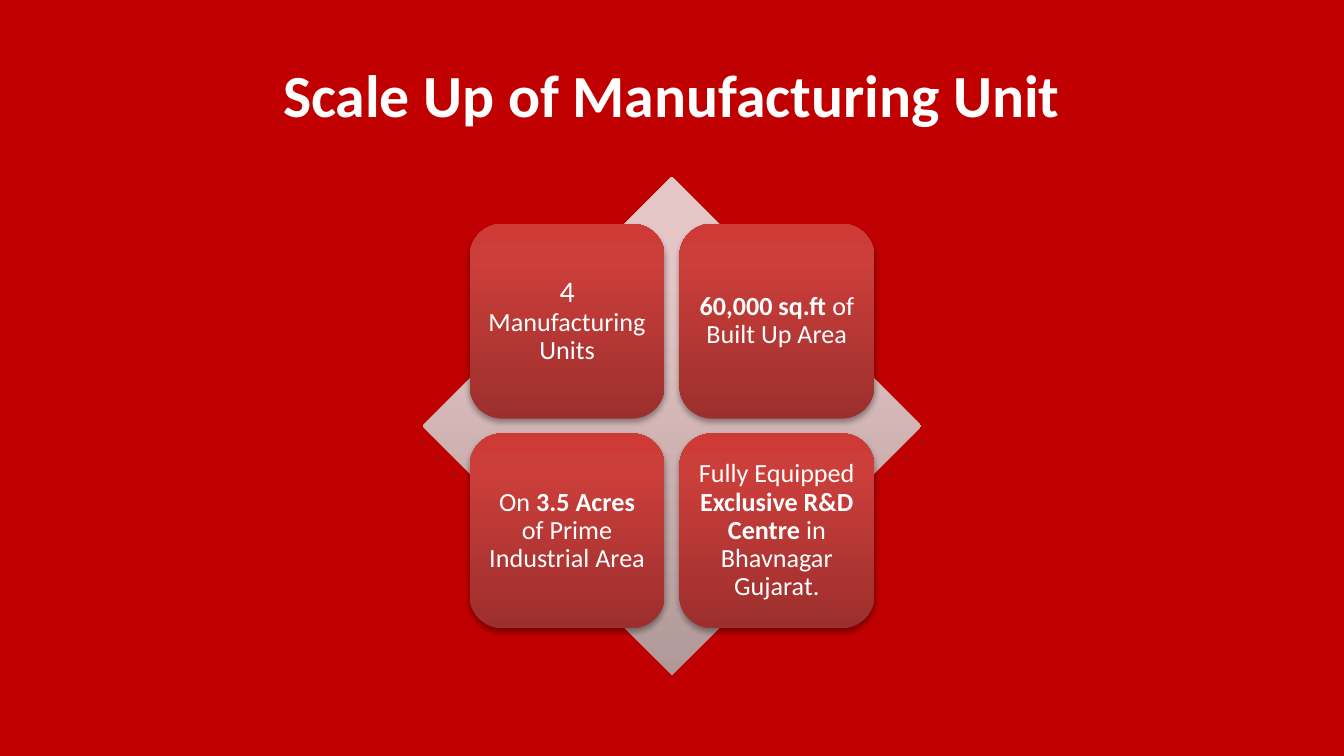
"""Build the slide about the scale-up of the manufacturing unit."""
import copy

import lxml.etree
import pptx
import pptx.dml.color
import pptx.enum.shapes
import pptx.enum.text
import pptx.oxml.ns
import pptx.util

WIDTH, HEIGHT = 10, 5.625
CENTER_X, CENTER_Y = WIDTH / 2, 3.17
DIAMOND_SIZE, CARD_SIZE, CARD_PITCH = 3.71, 1.45, 1.56
DIAMOND_STOPS = [(0, "B09998"), (0.8, "E5C6C6"), (1, "E6C7C6")]
CARD_STOPS = [(0, "9C2F2D"), (0.8, "CB3E3A"), (1, "CE3B37")]
CARDS = [
    [
        [("4", 16, False), (" Manufacturing Units", 14, False)],
        [("60,000 sq.ft ", 14, True), ("of Built Up Area", 14, False)],
    ],
    [
        [("On ", 14, False), ("3.5 Acres ", 14, True), ("of Prime Industrial Area", 14, False)],
        [("Fully Equipped ", 14, False), ("Exclusive R&D Centre ", 14, True),
         ("in Bhavnagar Gujarat.", 14, False)],
    ],
]


def color(hex_string):
    """Return the RGB colour for a hex string."""
    return pptx.dml.color.RGBColor.from_string(hex_string)


def write_runs(text_frame, runs, inset):
    """Write centred white runs of (text, size, bold) into a text frame."""
    text_frame.word_wrap = True
    text_frame.vertical_anchor = pptx.enum.text.MSO_ANCHOR.MIDDLE
    for side in ("left", "top", "right", "bottom"):
        setattr(text_frame, f"margin_{side}", pptx.util.Inches(inset))
    paragraph = text_frame.paragraphs[0]
    paragraph.alignment = pptx.enum.text.PP_ALIGN.CENTER
    for text, size, bold in runs:
        run = paragraph.add_run()
        run.text = text
        run.font.name = "Calibri"
        run.font.size = pptx.util.Pt(size)
        run.font.bold = bold
        run.font.color.rgb = color("FFFFFF")
    return paragraph


def add_gradient_shape(slide, kind, center_x, center_y, size, stops):
    """Add a square shape around a centre with a vertical gradient and no outline."""
    left, top = center_x - size / 2, center_y - size / 2
    shape = slide.shapes.add_shape(kind, *map(pptx.util.Inches, (left, top, size, size)))
    shape.shadow.inherit = False
    shape.line.fill.background()
    shape.fill.gradient()
    shape.fill.gradient_angle = 90
    stop_list = shape.element.spPr.find(".//" + pptx.oxml.ns.qn("a:gsLst"))
    stop_list.append(copy.deepcopy(stop_list[-1]))
    for stop, (position, hex_string) in zip(shape.fill.gradient_stops, stops):
        stop.position = position
        stop.color.rgb = color(hex_string)
    return shape


def add_shadow(shape):
    """Give a shape a soft black shadow that falls straight down."""
    qn = pptx.oxml.ns.qn
    effects = shape.element.spPr.find(qn("a:effectLst"))
    shadow = lxml.etree.SubElement(
        effects, qn("a:outerShdw"), blurRad=str(pptx.util.Pt(3.1)),
        dist=str(pptx.util.Pt(1.8)), dir="5400000", rotWithShape="0")
    black = lxml.etree.SubElement(shadow, qn("a:srgbClr"), val="000000")
    lxml.etree.SubElement(black, qn("a:alpha"), val="35000")


def add_card(slide, column, row, runs):
    """Add one rounded card at a column and row of the two-by-two grid."""
    card = add_gradient_shape(
        slide, pptx.enum.shapes.MSO_SHAPE.ROUNDED_RECTANGLE,
        CENTER_X + (column - 0.5) * CARD_PITCH, CENTER_Y + (row - 0.5) * CARD_PITCH,
        CARD_SIZE, CARD_STOPS)
    add_shadow(card)
    write_runs(card.text_frame, runs, 0.06).line_spacing = 0.9


def add_title(slide, text):
    """Add the slide title across the top."""
    title = slide.shapes.add_textbox(
        *map(pptx.util.Inches, (0.05 * WIDTH, 0.23, 0.9 * WIDTH, 0.94)))
    write_runs(title.text_frame, [(text, 32, True)], 0.05)


def main():
    """Build and save the presentation."""
    presentation = pptx.Presentation()
    presentation.slide_width = pptx.util.Inches(WIDTH)
    presentation.slide_height = pptx.util.Inches(HEIGHT)
    slide = presentation.slides.add_slide(presentation.slide_layouts[6])
    slide.background.fill.solid()
    slide.background.fill.fore_color.rgb = color("C00000")
    add_title(slide, "Scale Up of Manufacturing Unit")
    add_gradient_shape(slide, pptx.enum.shapes.MSO_SHAPE.DIAMOND,
                       CENTER_X, CENTER_Y, DIAMOND_SIZE, DIAMOND_STOPS)
    for row, cards in enumerate(CARDS):
        for column, runs in enumerate(cards):
            add_card(slide, column, row, runs)
    presentation.save("out.pptx")


if __name__ == "__main__":
    main()
